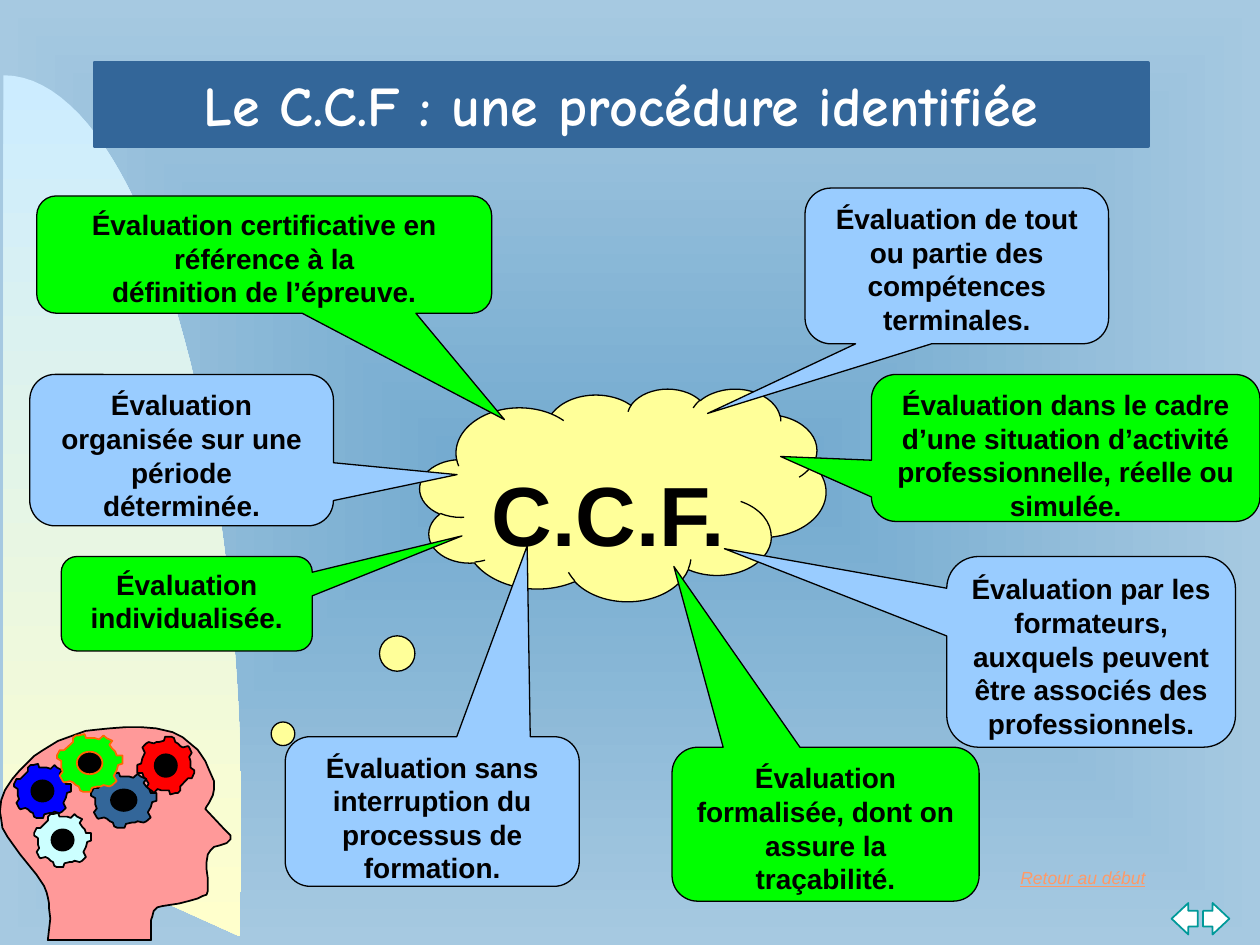
"""Build the slide on the C.C.F. as a clearly identified procedure."""
import copy
from dataclasses import dataclass

import pptx
import pptx.dml.color
import pptx.enum.shapes
import pptx.enum.text
import pptx.oxml
import pptx.oxml.ns
import pptx.util

Pt = pptx.util.Pt
MSO = pptx.enum.shapes.MSO_SHAPE
ALIGN = pptx.enum.text.PP_ALIGN
ANCHOR = pptx.enum.text.MSO_ANCHOR
qn = pptx.oxml.ns.qn


@dataclass(frozen=True)
class Theme:
    font: str = "Arial"
    title_font: str = "Comic Neue"
    title_size: int = 32
    topic_size: int = 48
    body_size: int = 16
    link_size: int = 10
    ink: str = "010000"
    black: str = "000000"
    white: str = "FFFFFF"
    navy: str = "336699"
    sky: str = "99CCFF"
    green: str = "00FF00"
    yellow: str = "FFFF99"
    pink: str = "FF9999"
    red: str = "FF0000"
    blue: str = "0000FF"
    ice: str = "CCFFFF"
    orange: str = "FF6600"
    link: str = "FF9966"
    teal: str = "009999"
    backdrop: tuple = ("73AACF", "A6C9E1")
    crescent: tuple = ("CCECFF", "FFFFCC")


def rgb(value):
    return pptx.dml.color.RGBColor.from_string(value)


def write_text(sp, text, *, size, color, font, bold=False, italic=False,
               underline=False, align=ALIGN.CENTER, anchor=ANCHOR.TOP, top=3.6, bottom=3.6):
    tf = sp.text_frame
    tf.word_wrap = True
    tf.vertical_anchor = anchor
    tf.margin_left = tf.margin_right = Pt(7.2)
    tf.margin_top, tf.margin_bottom = Pt(top), Pt(bottom)
    p = tf.paragraphs[0]
    p.text = text
    p.alignment = align
    for r in p.runs:
        f = r.font
        f.name, f.size, f.bold = font, Pt(size), bold
        f.italic, f.underline = italic, underline
        f.color.rgb = rgb(color)
    for br in p._p.findall(qn("a:br")):
        br.append(copy.deepcopy(p._p.find(qn("a:r")).find(qn("a:rPr"))))


class Deck:
    def __init__(self, theme):
        self.theme = theme
        self.prs = pptx.Presentation()
        self.prs.slide_width, self.prs.slide_height = Pt(720), Pt(540)
        self.s = self.prs.slides.add_slide(self.prs.slide_layouts[6])
        self.shapes = self.s.shapes

    def gradient(self, fill, colors):
        fill.gradient()
        for stop, color in zip(fill.gradient_stops, colors):
            stop.color.rgb = rgb(color)

    def background(self):
        self.gradient(self.s.background.fill, self.theme.backdrop)
        lin = self.s.element.find(".//" + qn("a:lin"))
        radial = pptx.oxml.parse_xml(
            '<a:path xmlns:a="http://schemas.openxmlformats.org/drawingml/2006/main" path="shape">'
            '<a:fillToRect l="50000" t="50000" r="50000" b="50000"/></a:path>')
        lin.getparent().replace(lin, radial)

    def paint(self, sp, fill, line, width):
        sp.shadow.inherit = False
        sp.fill.solid()
        sp.fill.fore_color.rgb = rgb(fill)
        sp.line.color.rgb = rgb(line)
        sp.line.width = Pt(width)

    def shape(self, kind, box, fill, line, width=0.75, adj=()):
        sp = self.shapes.add_shape(kind, *map(Pt, box))
        for i, value in enumerate(adj):
            sp.adjustments[i] = value
        self.paint(sp, fill, line, width)
        return sp

    def outline(self, points, left=0, top=0, sx=1, sy=1):
        pts = [(Pt(left + x * sx), Pt(top + y * sy)) for x, y in points]
        builder = self.shapes.build_freeform(*pts[0], scale=1.0)
        builder.add_line_segments(pts[1:], close=True)
        return builder.convert_to_shape()

    def crescent(self):
        curve = ((2, 43), (77, 43), (138, 236), (138, 474))
        steps = 40
        weights = [((1 - t) ** 3, 3 * t * (1 - t) ** 2, 3 * t * t * (1 - t), t ** 3)
                   for t in (i / steps for i in range(steps + 1))]
        points = [tuple(sum(w * c[k] for w, c in zip(ws, curve)) for k in (0, 1)) for ws in weights]
        sp = self.outline(points + [(137.7, 505), (137, 535), (2, 474)])
        sp.shadow.inherit = False
        sp.line.fill.background()
        self.gradient(sp.fill, self.theme.crescent)
        sp.fill.gradient_angle = 270

    def callout(self, text, box, fill, tip):
        t = self.theme
        sp = self.shape(MSO.ROUNDED_RECTANGULAR_CALLOUT, box, fill, t.black, adj=(*tip, 0.167))
        write_text(sp, text, size=t.body_size, color=t.ink, font=t.font, bold=True)

    def gear(self, box, fill, line, turned=False):
        left, top, width, height = box
        gw, gh = 45, 43
        points = [(gw - x, gh - y) for x, y in GEAR] if turned else GEAR
        self.paint(self.outline(points, left, top, width / gw, height / gh), fill, line, 1)
        hub = 0.39
        inset = (1 - hub) / 2
        self.shape(MSO.OVAL, (left + width * inset, top + height * inset, width * hub, height * hub),
                   self.theme.black, line, 1)

    def head(self, gears):
        t = self.theme
        self.shapes = self.s.shapes.add_group_shape().shapes
        self.paint(self.outline(HEAD, 0, 415.5, 0.72, 0.72), t.pink, t.black, 1)
        for gear in gears:
            self.gear(*gear)
        self.shapes = self.s.shapes


GEAR = [
    (23, 43), (20, 43), (18, 43), (16, 42), (15, 39), (13, 38), (11, 36), (9, 35), (5, 36), (4, 35),
    (3, 33), (2, 31), (4, 28), (3, 25), (3, 23), (3, 20), (0, 18), (0, 16), (1, 14), (2, 12),
    (5, 12), (7, 10), (9, 8), (11, 6), (11, 3), (13, 1), (15, 1), (19, 0), (20, 3), (24, 3),
    (26, 3), (29, 4), (32, 1), (34, 3), (36, 4), (38, 5), (36, 8), (38, 11), (40, 13), (41, 16),
    (45, 16), (45, 18), (45, 20), (45, 22), (42, 23), (41, 27), (40, 29), (39, 31), (41, 35),
    (40, 36), (38, 38), (36, 39), (32, 38), (30, 39), (28, 39), (24, 40)]
HEAD = [
    (120, 169), (120, 153), (121, 150), (122, 146), (125, 143), (129, 142), (142, 140), (150, 138),
    (157, 136), (161, 134), (164, 133), (165, 130), (165, 120), (164, 113), (164, 107), (165, 101),
    (167, 98), (170, 95), (174, 94), (180, 92), (182, 90), (183, 89), (183, 86), (181, 84),
    (179, 82), (164, 66), (163, 65), (164, 63), (166, 60), (169, 54), (170, 49), (170, 43),
    (166, 34), (163, 27), (157, 18), (151, 13), (145, 8), (137, 4), (124, 1), (112, 0), (100, 0),
    (87, 1), (77, 2), (68, 3), (57, 7), (46, 11), (33, 19), (27, 23), (22, 28), (16, 34), (10, 41),
    (4, 50), (1, 58), (0, 67), (1, 73), (2, 80), (6, 87), (16, 101), (29, 117), (35, 126),
    (37, 131), (38, 135), (39, 140), (39, 144), (40, 152), (38, 169)]


def main():
    t = Theme()
    deck = Deck(t)
    deck.background()
    deck.crescent()

    back = deck.shapes.add_textbox(*map(Pt, (576, 492, 120, 48)))
    write_text(back, "Retour au début", size=t.link_size, color=t.link, font=t.font,
               italic=True, underline=True, align=ALIGN.LEFT)
    for kind, left in ((MSO.LEFT_ARROW, 669.5), (MSO.RIGHT_ARROW, 687.5)):
        deck.shape(kind, (left, 516, 15, 18), t.white, t.teal, 1, adj=(0.5, 0.638))

    cloud = deck.shape(MSO.CLOUD_CALLOUT, (240, 222, 232, 121.5), t.yellow, t.ink, adj=(-1.095, 1.47))
    write_text(cloud, "C.C.F.", size=t.topic_size, color=t.ink, font=t.font, bold=True, top=24, bottom=0)

    callouts = (
        ("Évaluation de tout ou partie des compétences terminales.",
         (460, 107.5, 173.5, 89), t.sky, (-0.821, 0.947)),
        ("Évaluation individualisée.", (35, 318, 143.5, 54), t.green, (1.096, -0.718)),
        ("Évaluation certificative en\nréférence à la\ndéfinition de l’épreuve.",
         (21, 112, 260, 67), t.green, (0.528, 1.407)),
        ("Évaluation par les formateurs, auxquels peuvent être associés des professionnels.",
         (541, 318, 165, 109), t.sky, (-1.27, -0.541)),
        ("Évaluation organisée sur une période déterminée.",
         (17, 214, 173.5, 86.5), t.sky, (0.907, 0.162)),
        ("Évaluation sans interruption du processus de formation.",
         (163, 421, 168, 85.5), t.sky, (0.323, -1.776)),
        ("Évaluation dans le cadre d’une situation d’activité professionnelle, réelle ou simulée.",
         (498, 214, 222, 84), t.green, (-0.734, 0.058)),
        ("Évaluation formalisée, dont on assure la traçabilité.",
         (384, 427, 175.5, 88), t.green, (-0.494, -1.674)))
    for callout in callouts:
        deck.callout(*callout)

    deck.head((
        ((78.5, 421, 32.5, 33), t.red, t.black, True),
        ((8, 436.5, 32.5, 31), t.blue, t.black),
        ((52, 441.5, 37.5, 31.5), t.navy, t.black),
        ((32.5, 419.5, 37.5, 33), t.green, t.orange),
        ((19.5, 464.5, 32.5, 31), t.ice, t.black)))

    title = deck.shape(MSO.RECTANGLE, (54, 36, 602, 47.5), t.navy, t.navy, 2.25)
    write_text(title, "Le C.C.F : une procédure identifiée", size=t.title_size, color=t.white,
               font=t.title_font, bold=True, anchor=ANCHOR.MIDDLE)
    deck.prs.save("out.pptx")


if __name__ == "__main__":
    main()
